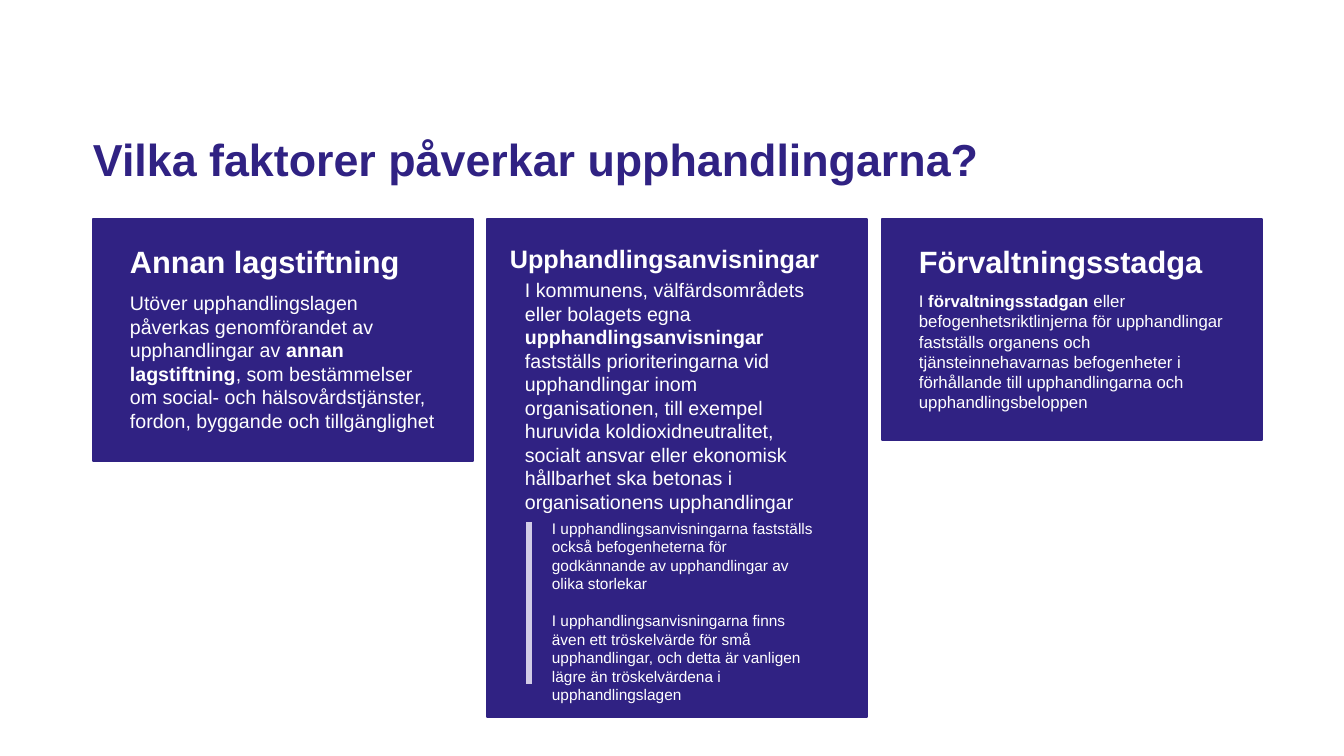
"""Build the slide on the factors that affect procurement."""
import pptx
import pptx.dml.color
import pptx.enum.shapes
import pptx.enum.text
import pptx.oxml
import pptx.util

EMU_PER_PX = 914400 / 100.8
PURPLE, LILAC, WHITE = "302283", "D2CDE7", "FFFFFF"
FONT = "Arial"

TITLE = "Vilka faktorer påverkar upphandlingarna?"
CARD_TOP, CARD_WIDTH = 219, 380
HEADING_TOP = 238
CARDS = [
    {
        "left": 93, "height": 242,
        "heading": ("Annan lagstiftning", 22, (120, 329, 47)),
        "body": (
            ["Utöver upphandlingslagen påverkas genomförandet av upphandlingar av ",
             "annan lagstiftning",
             ", som bestämmelser om social- och hälsovårdstjänster, fordon, "
             "byggande och tillgänglighet"],
            14, (120, 286, 329, 152)),
    },
    {
        "left": 487, "height": 498,
        "heading": ("Upphandlingsanvisningar", 18, (500, 343, 40)),
        "body": (
            ["I kommunens, välfärdsområdets eller bolagets egna ",
             "upphandlingsanvisningar",
             " fastställs prioriteringarna vid upphandlingar inom organisationen, "
             "till exempel huruvida koldioxidneutralitet, socialt ansvar eller "
             "ekonomisk hållbarhet ska betonas i organisationens upphandlingar"],
            14, (515, 273, 325, 224)),
    },
    {
        "left": 882, "height": 221,
        "heading": ("Förvaltningsstadga", 22, (909, 329, 47)),
        "body": (
            ["I ",
             "förvaltningsstadgan",
             " eller befogenhetsriktlinjerna för upphandlingar fastställs organens "
             "och tjänsteinnehavarnas befogenheter i förhållande till "
             "upphandlingarna och upphandlingsbeloppen"],
            12, (909, 286, 328, 132)),
    },
]
NOTES = [
    "I upphandlingsanvisningarna fastställs också befogenheterna för godkännande "
    "av upphandlingar av olika storlekar",
    "I upphandlingsanvisningarna finns även ett tröskelvärde för små "
    "upphandlingar, och detta är vanligen lägre än tröskelvärdena i "
    "upphandlingslagen",
]
NOTES_BOX = (542, 514, 291, 178)
NOTES_BAR = (529, 522, 529, 684)


def px(length):
    return pptx.util.Emu(round(length * EMU_PER_PX))


def color(value):
    return pptx.dml.color.RGBColor.from_string(value)


def add_text(slide, box, paragraphs, size, ink=WHITE, bold=False):
    """Add a text box; each paragraph is a list of runs, every second one bold."""
    frame = slide.shapes.add_textbox(*map(px, box)).text_frame
    frame.word_wrap = True
    for index, pieces in enumerate(paragraphs):
        paragraph = frame.add_paragraph() if index else frame.paragraphs[0]
        for position, piece in enumerate(pieces):
            run = paragraph.add_run()
            run.text = piece
            run.font.name = FONT
            run.font.size = pptx.util.Pt(size)
            run.font.bold = bold or position % 2 == 1
            run.font.color.rgb = color(ink)
    return frame


def add_title(slide):
    frame = add_text(slide, (93, 40, 1159, 146), [[TITLE]], 32, PURPLE, True)
    frame.vertical_anchor = pptx.enum.text.MSO_ANCHOR.BOTTOM
    frame.margin_left = frame.margin_right = 0
    frame.margin_top = frame.margin_bottom = 0
    frame.paragraphs[0].line_spacing = 0.9


def add_card(slide, card):
    shape = slide.shapes.add_shape(
        pptx.enum.shapes.MSO_SHAPE.RECTANGLE,
        px(card["left"]), px(CARD_TOP), px(CARD_WIDTH), px(card["height"]))
    shape.shadow.inherit = False
    shape.fill.solid()
    shape.fill.fore_color.rgb = color(PURPLE)
    shape.line.color.rgb = color(PURPLE)
    shape.line.width = pptx.util.Pt(1)

    heading, size, (left, width, height) = card["heading"]
    add_text(slide, (left, HEADING_TOP, width, height), [[heading]], size, bold=True)
    pieces, size, box = card["body"]
    add_text(slide, box, [pieces], size)


def add_notes(slide):
    frame = add_text(slide, NOTES_BOX, [[note] for note in NOTES], 11)
    frame.paragraphs[1].space_before = pptx.util.Pt(13)
    bar = slide.shapes.add_connector(
        pptx.enum.shapes.MSO_CONNECTOR.STRAIGHT, *map(px, NOTES_BAR))
    bar.line.color.rgb = color(LILAC)
    bar.line.width = pptx.util.Pt(4.5)
    bar._element.spPr.append(pptx.oxml.parse_xml(
        '<a:effectLst xmlns:a="http://schemas.openxmlformats.org/drawingml/2006/main"/>'))


def main():
    presentation = pptx.Presentation()
    presentation.slide_width = px(1344)
    presentation.slide_height = px(756)
    slide = presentation.slides.add_slide(presentation.slide_layouts[6])
    add_title(slide)
    for card in CARDS:
        add_card(slide, card)
    add_notes(slide)
    presentation.save("out.pptx")


if __name__ == "__main__":
    main()
